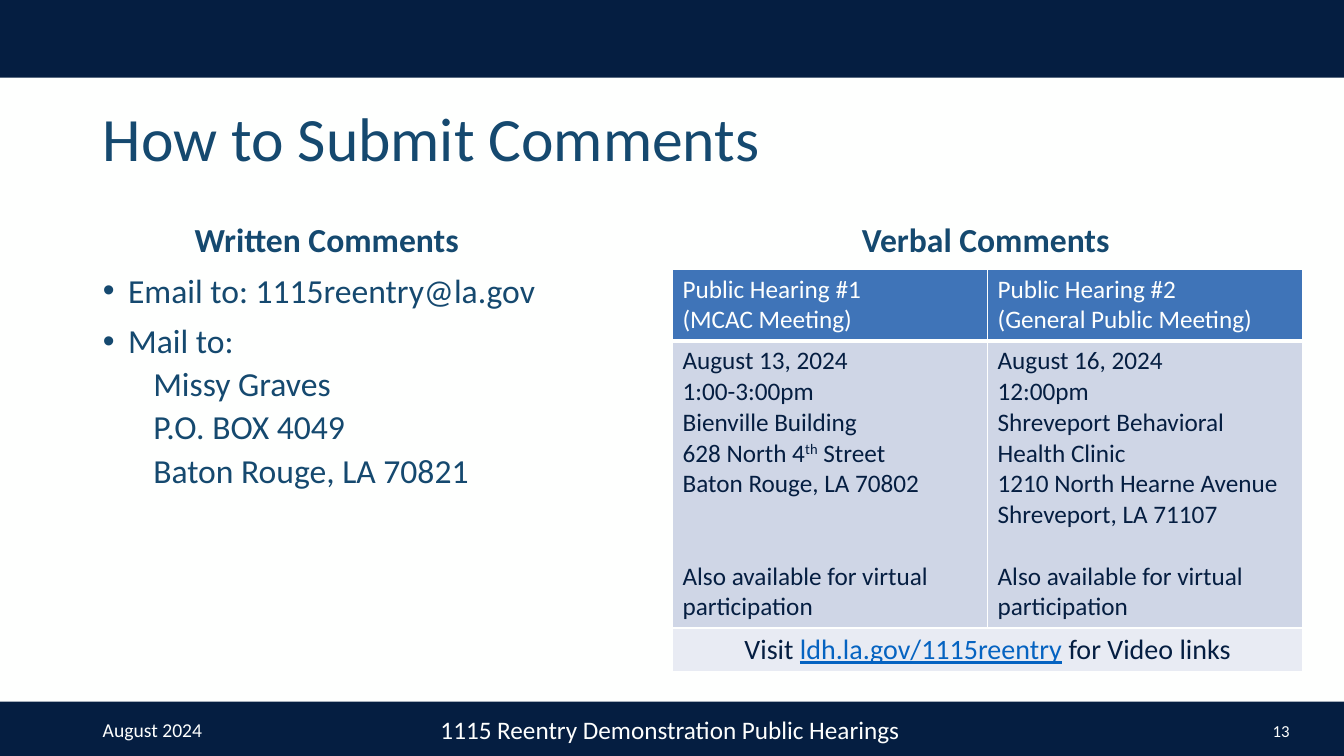
"""Build the slide on how to submit written and verbal comments."""
from lxml import etree
from pptx import Presentation
from pptx import util as u
from pptx.dml import color
from pptx.enum import shapes, text
from pptx.oxml import ns

NAVY = color.RGBColor(0x05, 0x1E, 0x41)
TEAL = color.RGBColor(0x15, 0x49, 0x6F)
WHITE = color.RGBColor(0xFE, 0xFF, 0xFE)
HEADER_BLUE = color.RGBColor(0x3F, 0x74, 0xB8)
ROW_BLUE = color.RGBColor(0xCF, 0xD6, 0xE6)
PALE_BLUE = color.RGBColor(0xE8, 0xEB, 0xF3)
LINK_BLUE = color.RGBColor(0x05, 0x63, 0xC1)
LEFT, CENTER, RIGHT = text.PP_ALIGN.LEFT, text.PP_ALIGN.CENTER, text.PP_ALIGN.RIGHT


def write(paragraph, content, size, rgb, font_format=None, **paragraph_format):
    """Add a formatted run and set the paragraph's format."""
    for name, value in paragraph_format.items():
        setattr(paragraph, name, value)
    run = paragraph.add_run()
    run.text = content
    run.font.color.rgb = rgb
    for name, value in {"name": "Calibri", "size": u.Pt(size), **(font_format or {})}.items():
        setattr(run.font, name, value)
    return run


def style_cell(cell, fill, bottom_width=1):
    """Give a cell white borders and a solid fill."""
    properties = cell._tc.get_or_add_tcPr()
    for side, width in {"L": 1, "R": 1, "T": 1, "B": bottom_width}.items():
        line = etree.SubElement(properties, ns.qn(f"a:ln{side}"), w=str(u.Pt(width)))
        solid = etree.SubElement(line, ns.qn("a:solidFill"))
        etree.SubElement(solid, ns.qn("a:srgbClr"), val=str(WHITE))
    cell.fill.solid()
    cell.fill.fore_color.rgb = fill


presentation = Presentation()
presentation.slide_width = u.Inches(13.33)
presentation.slide_height = u.Inches(7.5)
slide = presentation.slides.add_slide(presentation.slide_layouts[1])
slide.background.fill.solid()
slide.background.fill.fore_color.rgb = WHITE

for top, height in [(6.96, 0.54), (-0.03, 0.8)]:
    band = slide.shapes.add_shape(shapes.MSO_SHAPE.RECTANGLE, 0, u.Inches(top),
                                  presentation.slide_width, u.Inches(height))
    band.shadow.inherit = False
    band.fill.solid()
    band.fill.fore_color.rgb = NAVY
    band.line.fill.background()

title, body = slide.placeholders
for placeholder, box, anchor in [
    (title, (0.92, 0.8, 11.5, 1.2), text.MSO_ANCHOR.MIDDLE),
    (body, (0.92, 2.17, 4.64, 4.29), text.MSO_ANCHOR.TOP),
]:
    placeholder.left, placeholder.top, placeholder.width, placeholder.height = map(u.Inches, box)
    placeholder.text_frame.auto_size = text.MSO_AUTO_SIZE.NONE
    placeholder.text_frame.vertical_anchor = anchor
write(title.text_frame.paragraphs[0], "How to Submit Comments", 44, TEAL,
      alignment=LEFT, line_spacing=0.9)

written_comments = [
    ("Written Comments", "heading"),
    ("Email to: 1115reentry@la.gov", "bullet"),
    ("Mail to:", "bullet"),
    ("Missy Graves", "address"),
    ("P.O. BOX 4049", "address"),
    ("Baton Rouge, LA 70821", "address"),
]
written_formats = {
    "heading": (0, 0, {"alignment": CENTER, "space_before": u.Pt(0)}),
    "bullet": (0.25, -0.25, {"alignment": LEFT, "space_before": u.Pt(10)}),
    "address": (0.5, 0, {"alignment": LEFT, "space_before": u.Pt(5), "level": 1}),
}
for index, (content, role) in enumerate(written_comments):
    frame = body.text_frame
    paragraph = frame.paragraphs[0] if index == 0 else frame.add_paragraph()
    margin, indent, paragraph_format = written_formats[role]
    properties = paragraph._p.get_or_add_pPr()
    properties.set("marL", str(u.Inches(margin)))
    properties.set("indent", str(u.Inches(indent)))
    if role == "bullet":
        etree.SubElement(properties, ns.qn("a:buFont"), typeface="Arial")
        etree.SubElement(properties, ns.qn("a:buChar"), char="•")
    else:
        etree.SubElement(properties, ns.qn("a:buNone"))
    write(paragraph, content, 24, TEAL, {"bold": role == "heading"},
          line_spacing=0.9, **paragraph_format)

labels = [
    ("August 2024", (0.92, 7.04, 1.21, 0.4), 14, WHITE, False, LEFT),
    ("1115 Reentry Demonstration Public Hearings", (3.04, 7.04, 7.21, 0.4), 18, WHITE, False, CENTER),
    ("13", (11.29, 7.05, 1.6, 0.4), 12, WHITE, False, RIGHT),
    ("Verbal Comments", (8.45, 2.17, 2.68, 0.5), 24, TEAL, True, LEFT),
]
for content, box, size, rgb, bold, alignment in labels:
    frame = slide.shapes.add_textbox(*map(u.Inches, box)).text_frame
    frame.word_wrap = True
    frame.vertical_anchor = text.MSO_ANCHOR.TOP if bold else text.MSO_ANCHOR.MIDDLE
    write(frame.paragraphs[0], content, size, rgb, {"bold": bold},
          alignment=alignment, line_spacing=0.9 if bold else 1.0)

table = slide.shapes.add_table(3, 2, u.Inches(6.67), u.Inches(2.67),
                               u.Inches(6.25), u.Inches(3.99)).table
table.first_row = table.horz_banding = False
for row, height in zip(table.rows, (0.71, 2.85, 0.43)):
    row.height = u.Inches(height)

hearings = [
    (["Public Hearing #1", "(MCAC Meeting)"],
     ["August 13, 2024", "1:00-3:00pm", "Bienville Building", "628 North 4th Street",
      "Baton Rouge, LA 70802"], 44),
    (["Public Hearing #2", "(General Public Meeting)"],
     ["August 16, 2024", "12:00pm", "Shreveport Behavioral Health Clinic",
      "1210 North Hearne Avenue", "Shreveport, LA 71107"], 22),
]
for column, (heading, details, gap) in enumerate(hearings):
    details = details + ["Also available for virtual participation"]
    for row, lines, rgb, fill, border in [(0, heading, WHITE, HEADER_BLUE, 3),
                                          (1, details, NAVY, ROW_BLUE, 1)]:
        cell = table.cell(row, column)
        style_cell(cell, fill, border)
        for index, content in enumerate(lines):
            frame = cell.text_frame
            paragraph = frame.paragraphs[0] if index == 0 else frame.add_paragraph()
            start, ordinal, end = content.partition("4th")
            if ordinal:
                write(paragraph, start + "4", 18, rgb)
                suffix = write(paragraph, "th", 18, rgb)
                suffix._r.get_or_add_rPr().set("baseline", "30000")
                write(paragraph, end, 18, rgb)
            else:
                write(paragraph, content, 18, rgb)
    paragraph.space_before = u.Pt(gap)

visit_cell = table.cell(2, 0)
visit_cell.merge(table.cell(2, 1))
for cell in table.rows[2].cells:
    style_cell(cell, PALE_BLUE)
visit = visit_cell.text_frame.paragraphs[0]
visit.alignment = CENTER
for content, rgb, underline in [("Visit ", NAVY, False),
                                ("ldh.la.gov/1115reentry", LINK_BLUE, True),
                                (" for Video links", NAVY, False)]:
    write(visit, content, 20, rgb, {"underline": underline})

presentation.save("out.pptx")
